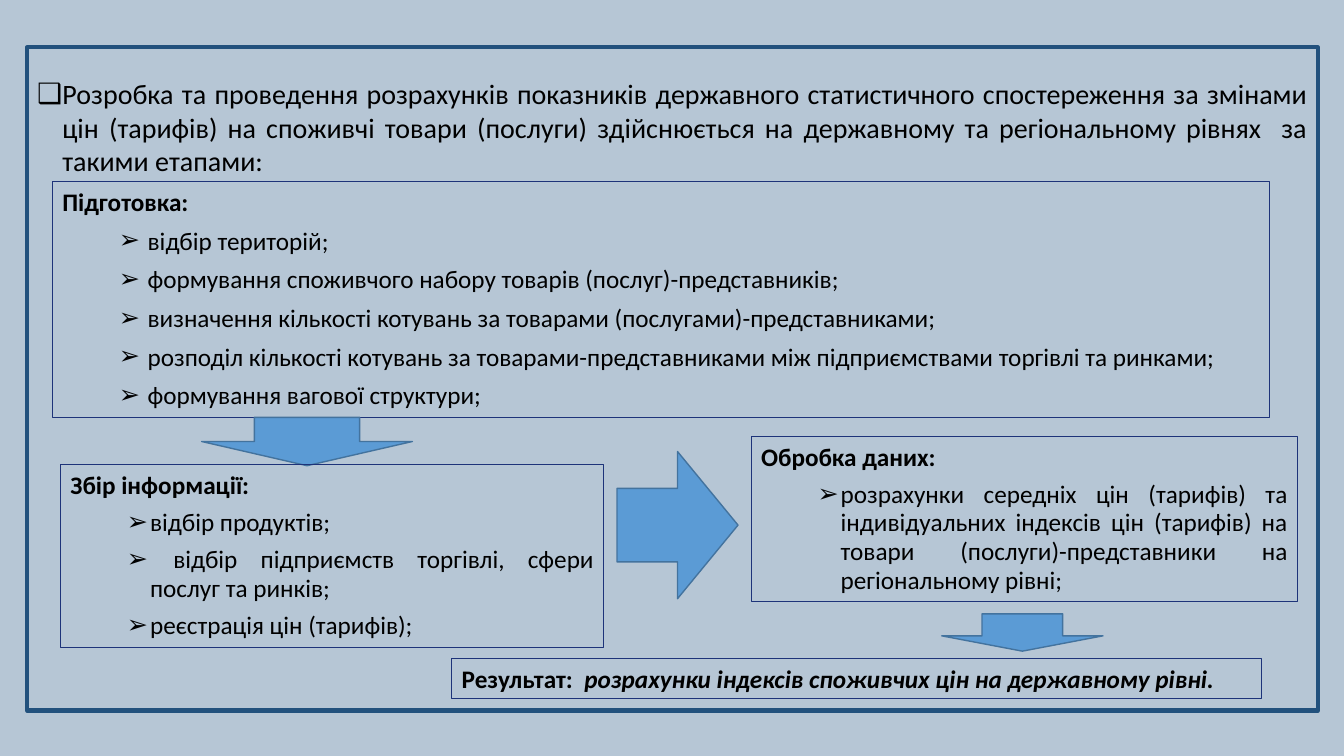
from lxml import etree
from pptx import Presentation
from pptx.dml.color import RGBColor
from pptx.enum.shapes import MSO_SHAPE
from pptx.enum.text import MSO_ANCHOR, PP_ALIGN
from pptx.oxml.ns import qn
from pptx.util import Inches, Pt

RECT = MSO_SHAPE.RECTANGLE
DOWN = MSO_SHAPE.DOWN_ARROW
RIGHT = MSO_SHAPE.RIGHT_ARROW
TOP = MSO_ANCHOR.TOP
LEFT = PP_ALIGN.LEFT
JUSTIFY = PP_ALIGN.JUSTIFY

BACK = RGBColor(0xB6, 0xC6, 0xD5)
FRAME = RGBColor(0x22, 0x51, 0x7D)
NAVY = RGBColor(0x1D, 0x33, 0x79)
BLUE = RGBColor(0x5B, 0x9B, 0xD5)
EDGE = RGBColor(0x43, 0x73, 0x9E)
BLACK = RGBColor(0, 0, 0)
FONT = "Calibri"

INTRO = (
    "Розробка та проведення розрахунків показників державного статистичного "
    "спостереження за змінами цін (тарифів) на споживчі товари (послуги) "
    "здійснюється на державному та регіональному рівнях  за такими етапами:"
)
PREPARE = [
    " відбір територій;",
    " формування споживчого набору товарів (послуг)-представників;",
    " визначення кількості котувань за товарами (послугами)-представниками;",
    " розподіл кількості котувань за товарами-представниками між "
    "підприємствами торгівлі та ринками;",
    " формування вагової структури;",
]
COLLECT = [
    "відбір продуктів;",
    " відбір підприємств торгівлі, сфери послуг та ринків;",
    "реєстрація цін (тарифів);",
]
PROCESS = [
    "розрахунки середніх цін (тарифів) та індивідуальних індексів цін "
    "(тарифів) на товари (послуги)-представники на регіональному рівні;",
]


def add_shape(slide, kind, box, line, width, fill=None):
    shape = slide.shapes.add_shape(kind, *[Inches(v) for v in box])
    shape.shadow.inherit = False
    if fill is None:
        shape.fill.background()
    else:
        shape.fill.solid()
        shape.fill.fore_color.rgb = fill
    shape.line.color.rgb = line
    shape.line.width = Pt(width)
    return shape


def add_panel(slide, box, line=NAVY, width=0.75):
    frame = add_shape(slide, RECT, box, line, width).text_frame
    frame.word_wrap = True
    frame.vertical_anchor = TOP
    frame.paragraphs[0].alignment = LEFT
    return frame


def add_run(para, text, size=18, bold=False, italic=False):
    run = para.add_run()
    run.text = text
    font = run.font
    font.name = FONT
    font.size = Pt(size)
    font.bold = bold
    font.italic = italic
    font.color.rgb = BLACK


def set_bullet(para, char, margin, hang):
    props = para._p.get_or_add_pPr()
    props.set("marL", str(Inches(margin)))
    props.set("indent", str(-Inches(hang)))
    etree.SubElement(props, qn("a:buFont")).set("typeface", "Arial")
    etree.SubElement(props, qn("a:buChar")).set("char", char)
    para.alignment = JUSTIFY


def add_intro(slide, box):
    frame = add_panel(slide, box, FRAME, 3)
    frame.margin_top = Inches(0.29)
    para = frame.paragraphs[0]
    set_bullet(para, "❑", 0.25, 0.25)
    add_run(para, INTRO, 20)


def add_stage(slide, box, title, items, spacing):
    frame = add_panel(slide, box)
    add_run(frame.paragraphs[0], title, bold=True)
    for item in items:
        para = frame.add_paragraph()
        set_bullet(para, "➢", 0.79, 0.23)
        para.line_spacing = spacing
        para.space_before = Pt(6)
        add_run(para, item)


def add_result(slide, box):
    para = add_panel(slide, box).paragraphs[0]
    add_run(para, "Результат:  ", bold=True)
    add_run(
        para,
        "розрахунки індексів споживчих цін на державному рівні.",
        bold=True,
        italic=True,
    )


def add_arrow(slide, kind, box, head=0.5):
    arrow = add_shape(slide, kind, box, EDGE, 1, BLUE)
    arrow.adjustments[1] = head


def main():
    deck = Presentation()
    deck.slide_width = Inches(13.33)
    deck.slide_height = Inches(7.5)
    slide = deck.slides.add_slide(deck.slide_layouts[6])
    slide.background.fill.solid()
    slide.background.fill.fore_color.rgb = BACK

    add_intro(slide, (0.27, 0.47, 12.8, 6.58))
    add_stage(slide, (0.52, 1.8, 12.07, 2.34), "Підготовка:", PREPARE, 1.0)
    add_arrow(slide, DOWN, (2, 4.14, 2.09, 0.48))
    add_stage(slide, (0.6, 4.61, 5.39, 1.81), "Збір інформації:", COLLECT, 0.95)
    add_stage(slide, (7.45, 4.33, 5.42, 1.64), "Обробка даних:", PROCESS, 0.95)
    add_arrow(slide, RIGHT, (6.12, 4.48, 1.2, 1.46))
    add_result(slide, (4.48, 6.53, 8.03, 0.4))
    add_arrow(slide, DOWN, (9.34, 6.09, 1.6, 0.37), 0.41)
    deck.save("out.pptx")


if __name__ == "__main__":
    main()
